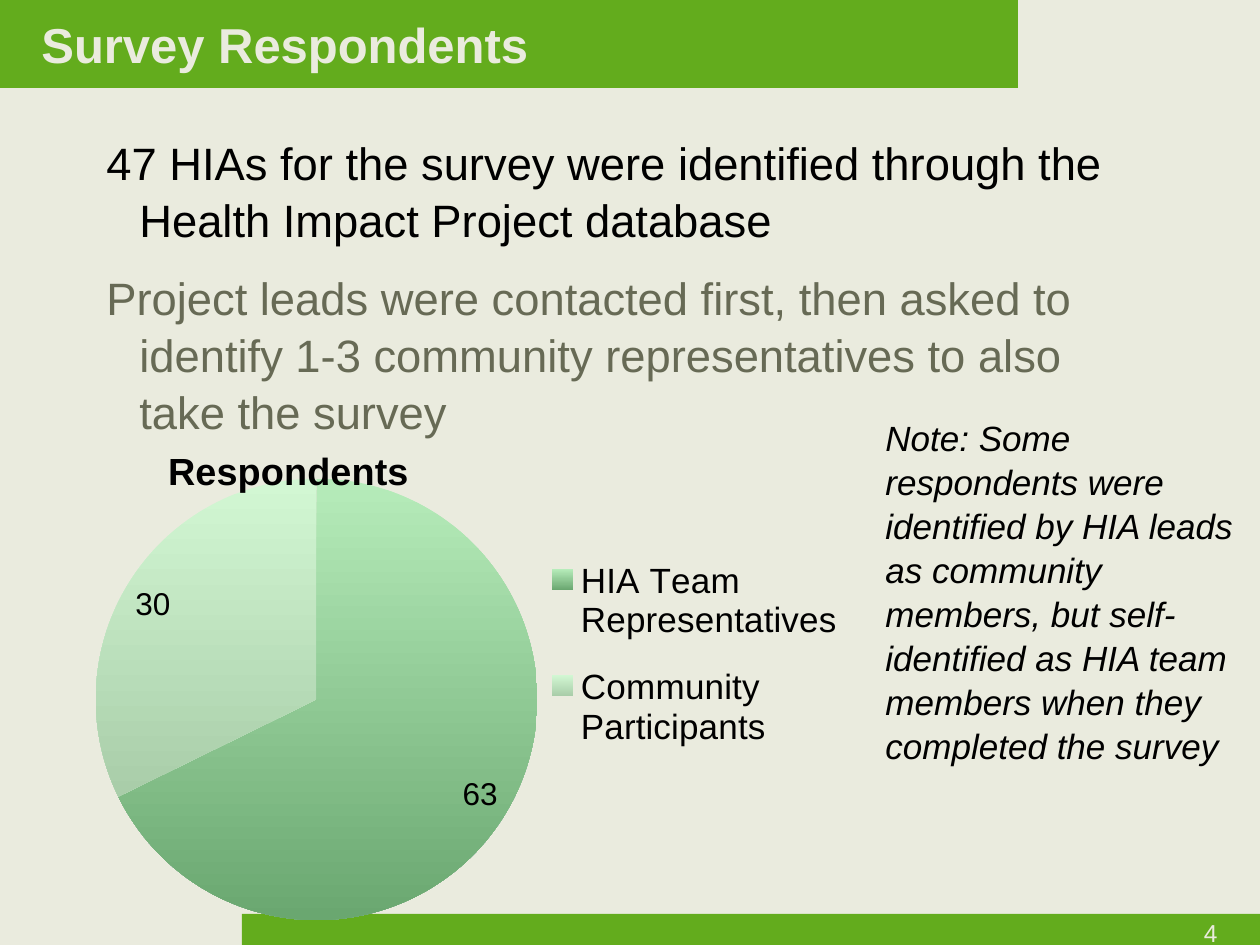
from dataclasses import dataclass
from lxml import etree
from pptx import Presentation
from pptx.chart.data import CategoryChartData
from pptx.dml.color import RGBColor
from pptx.enum.chart import XL_CHART_TYPE, XL_LABEL_POSITION, XL_LEGEND_POSITION
from pptx.enum.shapes import MSO_SHAPE
from pptx.enum.text import MSO_ANCHOR, PP_ALIGN
from pptx.oxml.ns import qn
from pptx.util import Emu, Pt

PIE = XL_CHART_TYPE.PIE
IN_END = XL_LABEL_POSITION.INSIDE_END
RIGHT = XL_LEGEND_POSITION.RIGHT
RECT = MSO_SHAPE.RECTANGLE
TOP, MIDDLE = MSO_ANCHOR.TOP, MSO_ANCHOR.MIDDLE
ALIGN_L, ALIGN_R = PP_ALIGN.LEFT, PP_ALIGN.RIGHT


@dataclass(frozen=True)
class Theme:
    face: str = "Arial"
    back: str = "EAEBDE"
    green: str = "63AC1D"
    ink: str = "000000"
    olive: str = "676A55"
    slices: tuple = (("B6ECBA", "6AA770"), ("D2F7D3", "A9CDA9"))
    title: float = 28
    body: float = 25.9
    note: float = 20
    page: float = 14
    head: float = 21.6
    label: float = 18
    line: float = 1.05


THEME = Theme()


def px(n):
    return Emu(round(n * 914400 / 126))


def rgb(code):
    return RGBColor.from_string(code)


def style(font, size, color, **more):
    font.color.rgb = rgb(color)
    values = {"name": THEME.face, "size": Pt(size), **more}
    for name, value in values.items():
        setattr(font, name, value)


def add_bar(slide, box):
    bar = slide.shapes.add_shape(RECT, *map(px, box))
    bar.shadow.inherit = False
    bar.fill.solid()
    bar.fill.fore_color.rgb = rgb(THEME.green)
    bar.line.fill.background()


def add_text(slide, box, parts, size, anchor=TOP, align=ALIGN_L, hang=0, after=0, **more):
    frame = slide.shapes.add_textbox(*map(px, box)).text_frame
    frame.word_wrap = True
    frame.vertical_anchor = anchor
    for i, (text, color) in enumerate(parts):
        para = frame.add_paragraph() if i else frame.paragraphs[0]
        para.alignment = align
        para.line_spacing = THEME.line
        para.space_after = Pt(after)
        if hang:
            props = para._p.get_or_add_pPr()
            props.set("marL", str(px(hang)))
            props.set("indent", str(-px(hang)))
        run = para.add_run()
        run.text = text
        style(run.font, size, color, **more)


def add_head(slide, box):
    x, y, w, h = box
    add_bar(slide, box)
    add_text(slide, (x + 29, y, w - 95, h - 4), [("Survey Respondents", THEME.back)],
             THEME.title, anchor=MIDDLE, bold=True)


def add_foot(slide, box):
    x, y, w, h = box
    add_bar(slide, box)
    add_text(slide, (x + w - 292, y - 4, 262, h), [("4", THEME.back)],
             THEME.page, align=ALIGN_R)


def add_body(slide, box):
    parts = [
        ("47 HIAs for the survey were identified through the Health Impact Project database",
         THEME.ink),
        ("Project leads were contacted first, then asked to identify 1-3 community "
         "representatives to also take the survey", THEME.olive),
    ]
    add_text(slide, box, parts, THEME.body, hang=33, after=12)


def add_note(slide, box):
    text = ("Note: Some respondents were identified by HIA leads as community members, "
            "but self-identified as HIA team members when they completed the survey")
    add_text(slide, box, [(text, THEME.ink)], THEME.note, italic=True)


def set_place(part, after, x, y, w=None, h=None, inner=False):
    for old in part.findall(qn("c:layout")):
        part.remove(old)
    layout = etree.Element(qn("c:layout"))
    manual = etree.SubElement(layout, qn("c:manualLayout"))
    values = {"layoutTarget": "inner" if inner else None,
              "xMode": "edge", "yMode": "edge", "x": x, "y": y, "w": w, "h": h}
    for name, value in values.items():
        if value is not None:
            etree.SubElement(manual, qn("c:" + name)).set("val", str(value))
    prior = part.find(qn(after)) if after else None
    if prior is None:
        part.insert(0, layout)
    else:
        prior.addnext(layout)


def add_pie(slide, box):
    data = CategoryChartData()
    data.categories = ["HIA Team Representatives", "Community Participants"]
    data.add_series("Respondents", (63, 30))
    chart = slide.shapes.add_chart(PIE, *map(px, box), data).chart
    style(chart.font, THEME.label, THEME.ink)

    chart.has_title = True
    run = chart.chart_title.text_frame.paragraphs[0].add_run()
    run.text = "Respondents"
    style(run.font, THEME.head, THEME.ink, bold=True)
    chart.chart_title.include_in_layout = False
    set_place(chart.chart_title._element, "c:tx", 0.13, 0.11)

    chart.has_legend = True
    legend = chart.legend
    legend.position = RIGHT
    legend.include_in_layout = False
    style(legend.font, THEME.note, THEME.ink)
    set_place(legend._element, "c:legendPos", 0.58, 0.28, 0.37, 0.43)

    plot = chart.plots[0]
    plot.vary_by_categories = True
    plot.has_data_labels = True
    labels = plot.data_labels
    labels.show_value = True
    labels.show_percentage = False
    labels.position = IN_END
    style(labels.font, THEME.label, THEME.ink)
    for i, colors in enumerate(THEME.slices):
        form = plot.series[0].points[i].format
        form.line.fill.background()
        form.fill.gradient()
        form.fill.gradient_angle = 270
        for stop, color in zip(form.fill.gradient_stops, colors):
            stop.color.rgb = rgb(color)
    area = chart._chartSpace.chart.plotArea
    set_place(area, None, 0.05, 0.18, 0.53, 0.79, inner=True)


def main():
    deck = Presentation()
    deck.slide_width, deck.slide_height = px(1260), px(945)
    slide = deck.slides.add_slide(deck.slide_layouts[6])
    slide.background.fill.solid()
    slide.background.fill.fore_color.rgb = rgb(THEME.back)
    add_foot(slide, (242, 914, 1018, 31))
    add_head(slide, (0, 0, 1018, 88))
    add_body(slide, (94, 126, 1071, 282))
    add_pie(slide, (52, 378, 840, 559))
    add_note(slide, (873, 408, 387, 352))
    deck.save("out.pptx")


if __name__ == "__main__":
    main()
